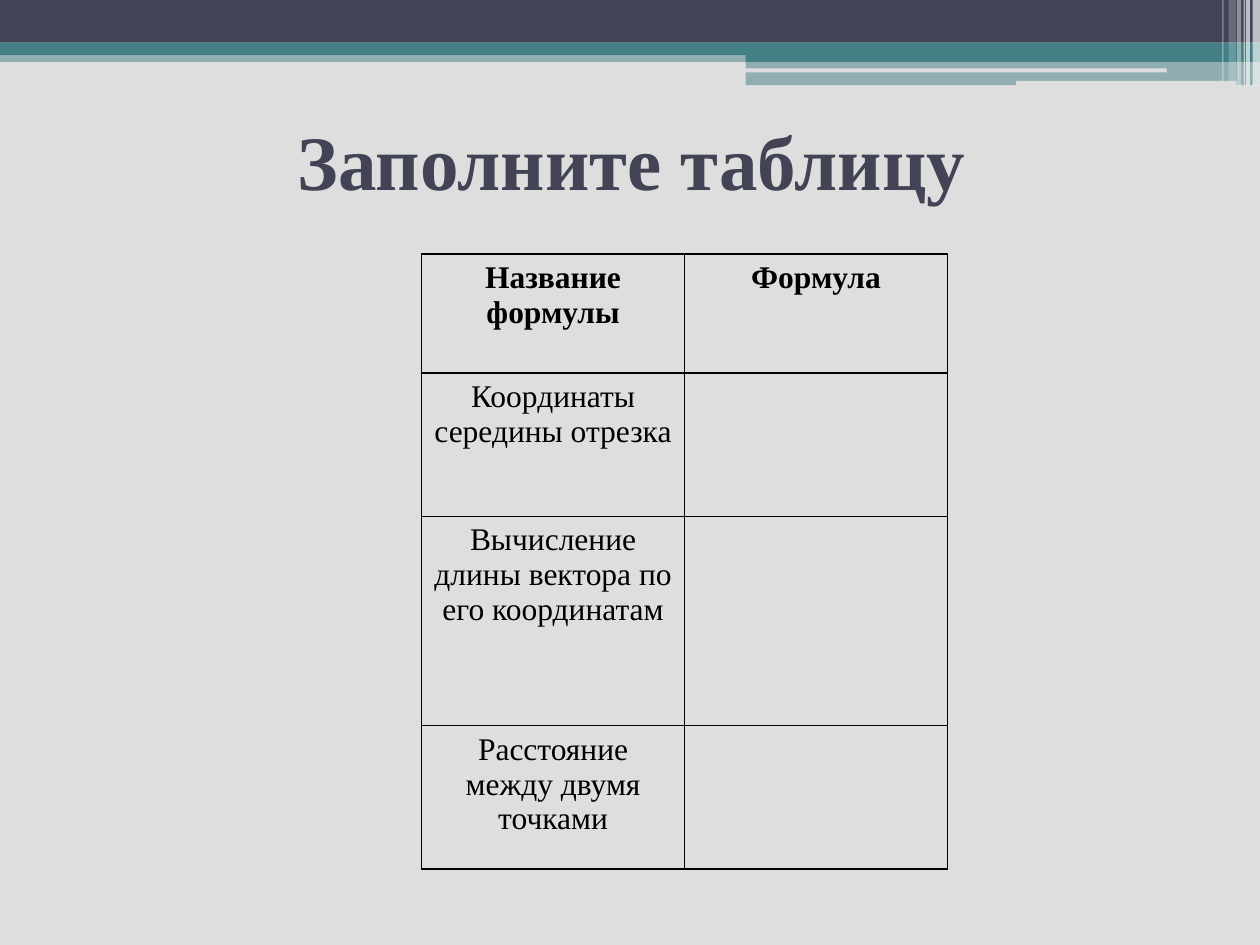
from dataclasses import dataclass

from lxml.etree import SubElement
from pptx import Presentation
from pptx.dml.color import RGBColor
from pptx.enum.shapes import MSO_SHAPE
from pptx.enum.text import MSO_ANCHOR, PP_ALIGN
from pptx.oxml.ns import qn
from pptx.util import Cm, Pt


@dataclass(frozen=True)
class Theme:
    """Colours, font and type sizes of the slide."""

    paper: str = "DEDEDE"
    navy: str = "424456"
    teal: str = "438086"
    white: str = "FFFFFF"
    black: str = "000000"
    font: str = "Times New Roman"
    title_size: int = 44
    body_size: int = 18
    border: int = 1


class SlideBuilder:
    """Adds styled elements to the current slide."""

    def __init__(self, slide, theme):
        self.slide = slide
        self.theme = theme
        fill = slide.background.fill
        fill.solid()
        fill.fore_color.rgb = RGBColor.from_string(theme.paper)

    def bar(self, x, y, w, h, color, opacity=100, kind=MSO_SHAPE.RECTANGLE):
        """Add a borderless bar, measured in centimetres."""
        sp = self.slide.shapes.add_shape(kind, Cm(x), Cm(y), Cm(w), Cm(h))
        sp.shadow.inherit = False
        sp.line.fill.background()
        sp.fill.solid()
        sp.fill.fore_color.rgb = RGBColor.from_string(color)
        if opacity < 100:
            clr = sp.element.spPr.find(qn("a:solidFill"))[0]
            SubElement(clr, qn("a:alpha"), val=str(opacity * 1000))

    def set_text(self, tf, text, size, color, bold):
        """Put one centred paragraph in a text frame."""
        tf.text = text
        tf.word_wrap = True
        p = tf.paragraphs[0]
        p.alignment = PP_ALIGN.CENTER
        for font in [p.font] + [r.font for r in p.runs]:
            font.name = self.theme.font
            font.size = Pt(size)
            font.bold = bold
            font.color.rgb = RGBColor.from_string(color)

    def title(self, text, x, y, w, h):
        """Add the slide title."""
        tf = self.slide.shapes.add_textbox(Cm(x), Cm(y), Cm(w), Cm(h)).text_frame
        self.set_text(tf, text, self.theme.title_size, self.theme.navy, True)
        tf.vertical_anchor = MSO_ANCHOR.MIDDLE

    def outline(self, cell):
        """Draw the four borders of a table cell."""
        tc_pr = cell._tc.get_or_add_tcPr()
        for i, side in enumerate(("lnL", "lnR", "lnT", "lnB")):
            ln = tc_pr.makeelement(qn(f"a:{side}"), w=str(Pt(self.theme.border)))
            fill = SubElement(ln, qn("a:solidFill"))
            SubElement(fill, qn("a:srgbClr"), val=self.theme.black)
            tc_pr.insert(i, ln)

    def table(self, rows, x, y, col_width, heights):
        """Add a ruled table with a bold first row."""
        n = len(rows[0])
        tbl = self.slide.shapes.add_table(
            len(rows), n, Cm(x), Cm(y), Cm(col_width * n), Cm(sum(heights))
        ).table
        for col in tbl.columns:
            col.width = Cm(col_width)
        for i, (texts, height) in enumerate(zip(rows, heights)):
            tbl.rows[i].height = Cm(height)
            for j, text in enumerate(texts):
                cell = tbl.cell(i, j)
                cell.fill.background()
                self.outline(cell)
                self.set_text(cell.text_frame, text, self.theme.body_size,
                              self.theme.black, i == 0)


def main():
    """Build the slide and save it."""
    prs = Presentation()
    prs.slide_width, prs.slide_height = Cm(25.4), Cm(19.05)
    theme = Theme()
    s = SlideBuilder(prs.slides.add_slide(prs.slide_layouts[6]), theme)

    s.bar(0, 1.02, 25.4, 0.23, theme.teal, 50)
    s.bar(0, 0, 25.4, 0.86, theme.navy)
    s.bar(0, 0.86, 25.4, 0.25, theme.teal)
    s.bar(15.03, 1, 10.37, 0.25, theme.teal)
    s.bar(15.03, 1.23, 10.37, 0.49, theme.teal, 50)
    s.bar(15.01, 1.38, 8.51, 0.08, theme.paper, kind=MSO_SHAPE.ROUNDED_RECTANGLE)
    s.bar(20.48, 1.63, 4.45, 0.1, theme.paper, kind=MSO_SHAPE.ROUNDED_RECTANGLE)

    stripes = [
        (25.25, 0.15, 1.73, 65),
        (25.12, 0.08, 1.73, 65),
        (25.07, 0.03, 1.73, 60),
        (24.94, 0.08, 1.73, 40),
        (24.77, 0.15, 1.63, 20),
        (24.64, 0.03, 1.63, 30),
    ]
    for x, w, h, opacity in stripes:
        s.bar(x, 0, w, h, theme.white, opacity)

    s.title("Заполните таблицу ", 1.5, 1.73, 22.86, 2.97)
    rows = [
        ("Название формулы", "Формула"),
        ("Координаты середины отрезка", ""),
        ("Вычисление длины вектора по его координатам", ""),
        ("Расстояние между двумя точками", ""),
    ]
    s.table(rows, 8.5, 5.12, 5.3, [2.4, 2.89, 4.22, 2.89])
    prs.save("out.pptx")


if __name__ == "__main__":
    main()
